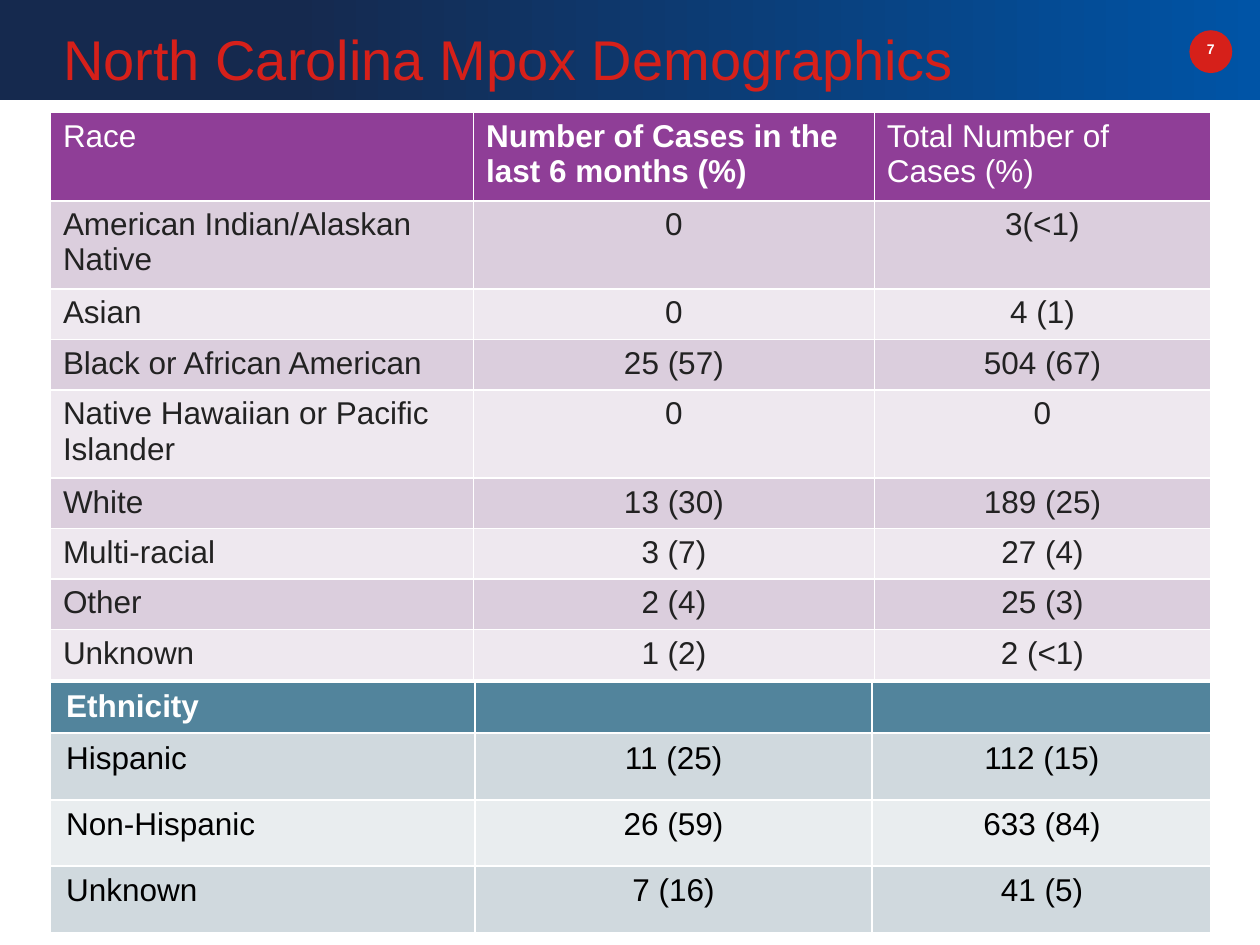
import pptx
import pptx.util
import pptx.dml.color
import pptx.enum.shapes
import pptx.enum.text
import pptx.oxml
from pptx.oxml.ns import nsdecls

Pt = pptx.util.Pt
ALIGN = pptx.enum.text.PP_ALIGN
ANCHOR = pptx.enum.text.MSO_ANCHOR
SHAPE = pptx.enum.shapes.MSO_SHAPE
C = {
    "navy": "15294E", "blue": "0054A6", "red": "D6201A", "white": "FFFFFF",
    "purple": "8F3E97", "lilac": "DBCEDD", "pale lilac": "EEE8EF", "ink": "222222",
    "teal": "52849C", "mist": "D0D9DE", "pale mist": "E9EDEF", "black": "000000",
}


def rgb(name):
    return pptx.dml.color.RGBColor.from_string(C[name])


def style_text(p, size, color, bold=False, align=ALIGN.LEFT):
    p.alignment = align
    p.font.name = "Arial"
    p.font.size = Pt(size)
    p.font.bold = bold
    p.font.color.rgb = rgb(color)


prs = pptx.Presentation()
prs.slide_width, prs.slide_height = Pt(720), Pt(540)
s = prs.slides.add_slide(prs.slide_layouts[5])

# Header band, placed behind the title
band = s.shapes.add_shape(SHAPE.RECTANGLE, 0, 0, Pt(720), Pt(57.2))
band.shadow.inherit = False
band.line.fill.background()
band.fill.gradient()
band.fill.gradient_angle = 0
for stop, color, position in zip(band.fill.gradient_stops, ("navy", "blue"), (0.23, 1)):
    stop.color.rgb = rgb(color)
    stop.position = position
s.shapes._spTree.insert(2, band._element)

# Title
sp = s.shapes.title
sp.left, sp.top, sp.width, sp.height = Pt(28.8), Pt(7.9), Pt(638), Pt(51)
tf = sp.text_frame
tf.text = "North Carolina Mpox Demographics"
tf.vertical_anchor = ANCHOR.MIDDLE
style_text(tf.paragraphs[0], 32, "red")

# Page number badge
badge = s.shapes.add_shape(SHAPE.OVAL, Pt(679.7), Pt(17.3), Pt(24.5), Pt(24.5))
badge.shadow.inherit = False
badge.fill.solid()
badge.fill.fore_color.rgb = rgb("red")
badge.line.fill.background()
tf = s.shapes.add_textbox(Pt(679.7), Pt(19.4), Pt(24.5), Pt(17.3)).text_frame
tf.word_wrap = True
tf.margin_left = tf.margin_right = 0
tf.text = "7"
style_text(tf.paragraphs[0], 8, "white", True, ALIGN.CENTER)

# Race and ethnicity tables
race_rows = [
    ("Race", "Number of Cases in the last 6 months (%)", "Total Number of Cases (%)"),
    ("American Indian/Alaskan Native", "0", "3(<1)"),
    ("Asian", "0", "4 (1)"),
    ("Black or African American", "25 (57)", "504 (67)"),
    ("Native Hawaiian or Pacific Islander", "0", "0"),
    ("White", "13 (30)", "189 (25)"),
    ("Multi-racial", "3 (7)", "27 (4)"),
    ("Other", "2 (4)", "25 (3)"),
    ("Unknown", "1 (2)", "2 (<1)"),
]
ethnicity_rows = [
    ("Ethnicity", "", ""),
    ("Hispanic", "11 (25)", "112 (15)"),
    ("Non-Hispanic", "26 (59)", "633 (84)"),
    ("Unknown", "7 (16)", "41 (5)"),
]
one, two = 27.4, 47.5  # heights of one-line and two-line rows
tables = [
    dict(rows=race_rows, top=64.3, widths=(241.8, 229, 192.2),
         heights=(two, two, one, one, two, one, one, one, one),
         head="purple", bands=("lilac", "pale lilac"), ink="ink",
         bold_col=1, margins=(7.2, 3.6), border=1),
    dict(rows=ethnicity_rows, top=389.5, widths=(242.5, 227.3, 193.7),
         heights=(28.8, 38, 38, 38),
         head="teal", bands=("mist", "pale mist"), ink="black",
         bold_col=0, margins=(9, 4), border=1.29),
]
for t in tables:
    frame = s.shapes.add_table(len(t["rows"]), 3, Pt(28.8), Pt(t["top"]),
                               Pt(sum(t["widths"])), Pt(sum(t["heights"])))
    table = frame.table
    table.first_row = table.horz_banding = False
    for column, width in zip(table.columns, t["widths"]):
        column.width = Pt(width)
    for i, (row, height) in enumerate(zip(table.rows, t["heights"])):
        row.height = Pt(height)
        head = i == 0
        for j, cell in enumerate(row.cells):
            cell.text = t["rows"][i][j]
            align = ALIGN.LEFT if head or j == 0 else ALIGN.CENTER
            style_text(cell.text_frame.paragraphs[0], 18, "white" if head else t["ink"],
                       head and j == t["bold_col"], align)
            cell.margin_left = cell.margin_right = Pt(t["margins"][0])
            cell.margin_top = cell.margin_bottom = Pt(t["margins"][1])
            # Borders come before the fill in the cell properties
            for side in ("lnL", "lnR", "lnT", "lnB"):
                cell._tc.get_or_add_tcPr().append(pptx.oxml.parse_xml(
                    f'<a:{side} {nsdecls("a")} w="{Pt(t["border"])}"><a:solidFill>'
                    f'<a:srgbClr val="{C["white"]}"/></a:solidFill></a:{side}>'))
            cell.fill.solid()
            cell.fill.fore_color.rgb = rgb(t["head"] if head else t["bands"][(i - 1) % 2])

prs.save("out.pptx")
